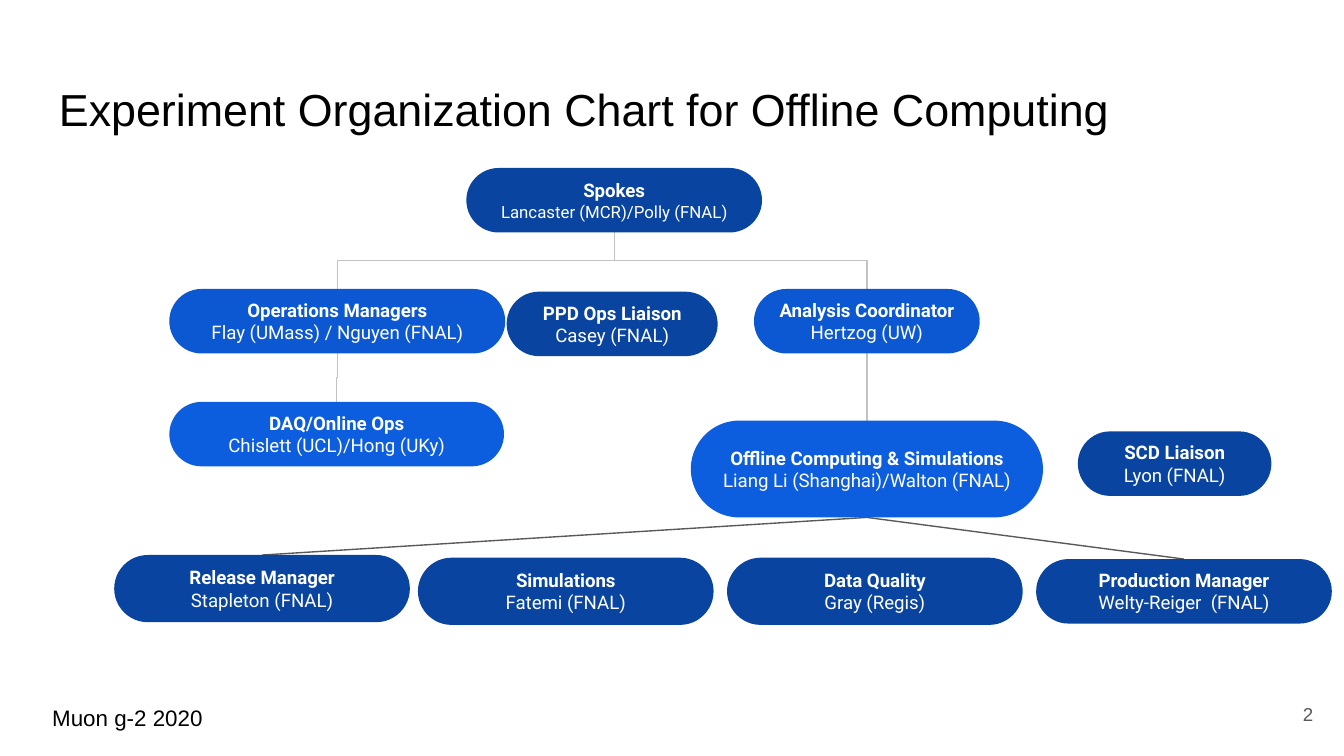
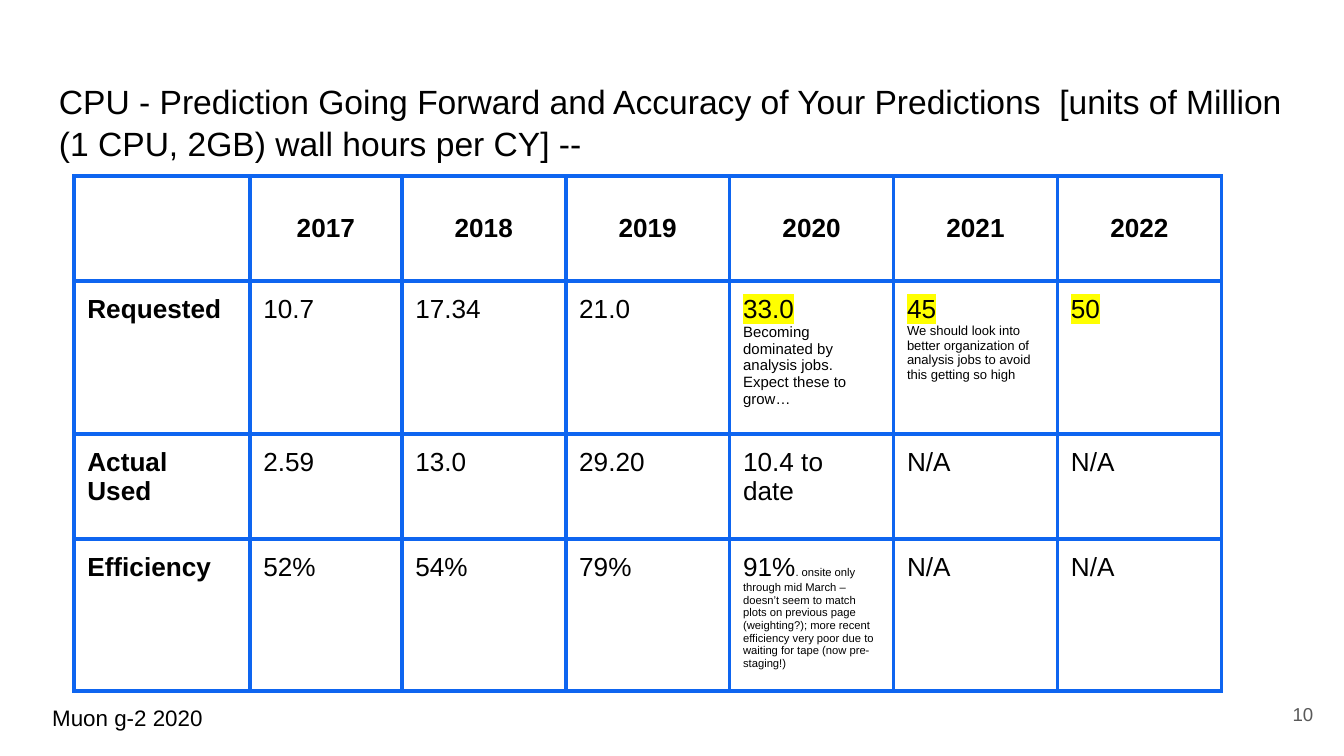
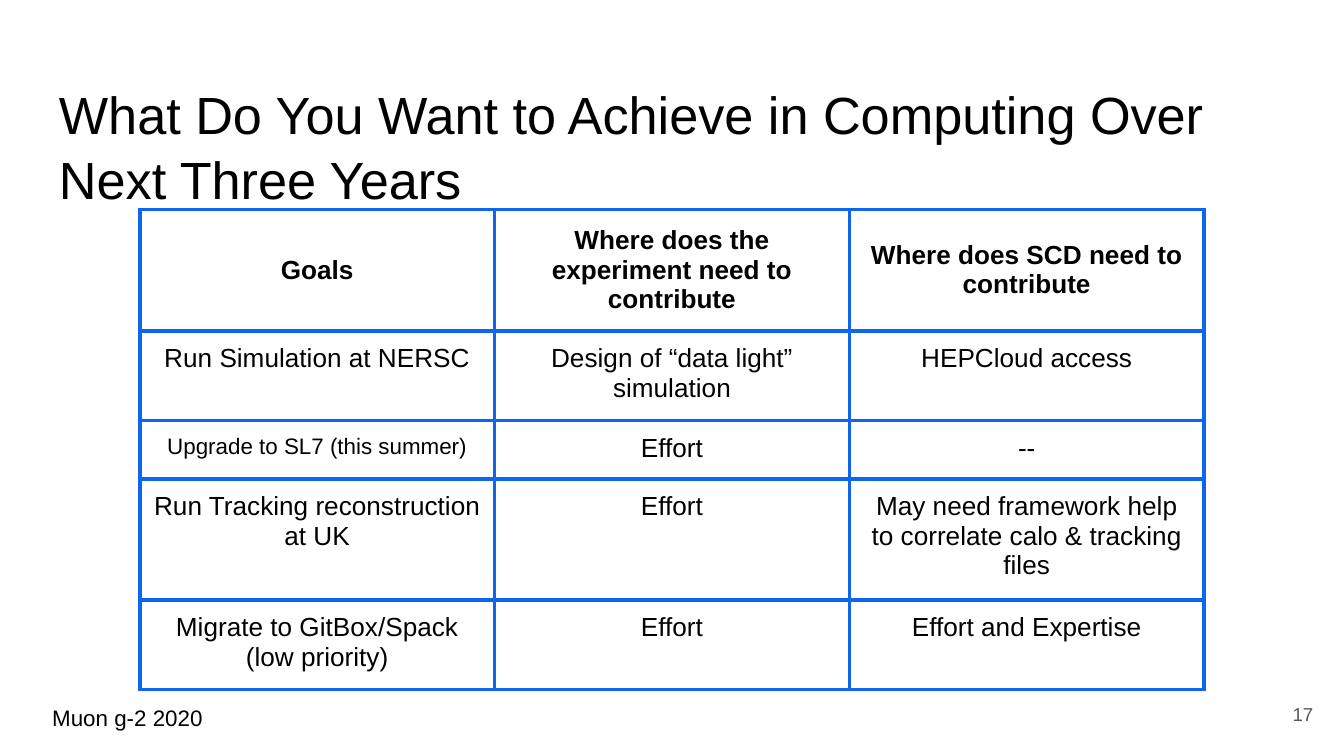
"""Builds three slides on offline computing: an organization chart and two tables."""
import copy
from dataclasses import dataclass
from typing import Optional

import pptx
import pptx.dml.color
import pptx.enum.shapes
import pptx.enum.text
import pptx.oxml
import pptx.oxml.ns
import pptx.util
from lxml import etree

ALIGN = pptx.enum.text.PP_ALIGN
ANCHOR = pptx.enum.text.MSO_ANCHOR
CONNECTOR = pptx.enum.shapes.MSO_CONNECTOR
qn = pptx.oxml.ns.qn

WIDTH, HEIGHT = pptx.util.Inches(10), pptx.util.Inches(5.625)
COLUMNS, ROWS = 100, 56.25
BLACK, WHITE, GRAY, SILVER = "000000", "FFFFFF", "595959", "C2C2C2"
NAVY, ROYAL, AZURE, BORDER = "0944A1", "0C58D3", "0D5DDF", "0E65F0"
YELLOW = "FFFF00"


@dataclass
class Run:
    text: str
    size: float = 14
    bold: bool = False
    color: str = BLACK
    font: str = "Arial"
    highlight: Optional[str] = None


@dataclass
class Post:
    role: str
    people: str
    x: float
    y: float
    w: float
    h: float = 4.8
    fill: str = NAVY
    people_size: float = 10
    same_paragraph: bool = False


@dataclass
class Link:
    parent: str
    child: str
    kind: int = CONNECTOR.ELBOW
    color: str = SILVER


POSTS = [
    Post("Spokes", "Lancaster (MCR)/Polly (FNAL)", 34.7, 12.5, 22, people_size=9),
    Post("Analysis Coordinator", "Hertzog (UW)", 56.1, 21.5, 16.8, fill=ROYAL),
    Post("Operations Managers", "Flay (UMass) / Nguyen (FNAL)", 12.6, 21.5, 25,
         fill=ROYAL, same_paragraph=True),
    Post("DAQ/Online Ops", "Chislett (UCL)/Hong (UKy)", 12.6, 29.9, 24.9,
         fill=AZURE, same_paragraph=True),
    Post("Offline Computing & Simulations", "Liang Li (Shanghai)/Walton (FNAL)",
         51.4, 31.3, 26.2, 7.2, AZURE, same_paragraph=True),
    Post("Release Manager", "Stapleton (FNAL)", 8.5, 41.3, 22, 5),
    Post("Production Manager", "Welty-Reiger  (FNAL)", 77.1, 41.6, 22),
    Post("SCD Liaison", "Lyon (FNAL)", 80.2, 32.1, 14.4),
    Post("Simulations", "Fatemi (FNAL)", 31.1, 41.5, 22, 5),
    Post("Data Quality", "Gray (Regis)", 54.1, 41.5, 22, 5),
    Post("PPD Ops Liaison", "Casey (FNAL)", 37.7, 21.7, 15.7),
]

LINKS = [
    Link("Spokes", "Analysis Coordinator"),
    Link("Spokes", "Operations Managers"),
    Link("Operations Managers", "DAQ/Online Ops"),
    Link("Analysis Coordinator", "Offline Computing & Simulations"),
    Link("Offline Computing & Simulations", "Release Manager", CONNECTOR.STRAIGHT, GRAY),
    Link("Offline Computing & Simulations", "Production Manager", CONNECTOR.STRAIGHT, GRAY),
]

CPU_ROWS = [
    ["", "2017", "2018", "2019", "2020", "2021", "2022"],
    ["Requested", "10.7", "17.34", "21.0",
     [[Run("33.0", highlight=YELLOW)],
      [Run("Becoming dominated by analysis jobs. Expect these to grow…", 8)]],
     [[Run("45", highlight=YELLOW)],
      [Run("We should look into better organization of analysis jobs "
           "to avoid this getting so high", 7)]],
     [[Run("50", highlight=YELLOW)]]],
    ["Actual Used", "2.59", "13.0", "29.20", "10.4 to date", "N/A", "N/A"],
    ["Efficiency", "52%", "54%", "79%",
     [[Run("91%"),
       Run(". onsite only through mid March – doesn’t seem to match plots on previous "
           "page (weighting?); more recent efficiency very poor due to waiting for tape "
           "(now pre-staging!)", 6)]],
     "N/A", "N/A"],
]

GOAL_ROWS = [
    ["Goals", "Where does the experiment need to contribute", "Where does SCD need to contribute"],
    ["Run Simulation at NERSC", "Design of “data light” simulation", "HEPCloud access"],
    [[[Run("Upgrade to SL7 (this summer)", 12)]], "Effort", "--"],
    ["Run Tracking reconstruction at UK", "Effort",
     "May need framework help to correlate calo & tracking files"],
    ["Migrate to GitBox/Spack\n(low priority)", "Effort", "Effort and Expertise"],
]


def across(columns: float) -> int:
    """Return the length of a number of grid columns."""
    return int(WIDTH * columns / COLUMNS)


def down(rows: float) -> int:
    """Return the length of a number of grid rows."""
    return int(HEIGHT * rows / ROWS)


def rgb(value: str) -> pptx.dml.color.RGBColor:
    """Return the colour for a hex string."""
    return pptx.dml.color.RGBColor.from_string(value)


def add_run(p, run: Run) -> None:
    """Add a run, turning its newlines into line breaks."""
    for i, piece in enumerate(run.text.split("\n")):
        if i:
            p.add_line_break()
            p._p[-1].append(copy.deepcopy(r._r.rPr))
        if not piece:
            continue
        r = p.add_run()
        r.text = piece
        r.font.name, r.font.size, r.font.bold = run.font, pptx.util.Pt(run.size), run.bold
        r.font.color.rgb = rgb(run.color)
        if run.highlight:
            mark = etree.Element(qn("a:highlight"))
            etree.SubElement(mark, qn("a:srgbClr"), val=run.highlight)
            r._r.rPr.find(qn("a:solidFill")).addnext(mark)


def write(tf, paragraphs: list, align=ALIGN.LEFT, spacing: float = 1.0) -> None:
    """Fill a text frame with paragraphs of runs."""
    for i, runs in enumerate(paragraphs):
        p = tf.add_paragraph() if i else tf.paragraphs[0]
        p.alignment, p.line_spacing = align, spacing
        for run in runs:
            add_run(p, run)


def set_frame(tf, anchor) -> None:
    """Give a text frame wrapping, equal insets and an anchor."""
    tf.word_wrap, tf.vertical_anchor = True, anchor
    tf.margin_left = tf.margin_right = across(1)
    tf.margin_top = tf.margin_bottom = down(1)


def add_text(s, x: float, y: float, w: float, h: float, run: Run,
             align=ALIGN.LEFT, anchor=ANCHOR.TOP, spacing: float = 1.0) -> None:
    """Add a text box holding one run."""
    tf = s.shapes.add_textbox(across(x), down(y), across(w), down(h)).text_frame
    set_frame(tf, anchor)
    write(tf, [[run]], align, spacing)


def add_slide(prs, title: str, size: float, number: int, title_height: float = 6.3):
    """Add a slide with its title, footer and page number."""
    s = prs.slides.add_slide(prs.slide_layouts[6])
    add_text(s, 2.9, 51.4, 16, 2.9, Run("Muon g-2 2020", 12))
    add_text(s, 3.4, 4.9, 93.2, title_height, Run(title, size), spacing=1.04)
    add_text(s, 92.7, 51, 6, 4.3, Run(str(number), 10, color=GRAY), ALIGN.RIGHT, ANCHOR.MIDDLE)
    return s


def add_link(s, link: Link, posts: dict) -> None:
    """Join the bottom of the parent post to the top of the child post."""
    parent, child = posts[link.parent], posts[link.child]
    x1, y1 = across(parent.x + parent.w / 2), down(parent.y + parent.h)
    x2, y2 = across(child.x + child.w / 2), down(child.y)
    if link.kind == CONNECTOR.ELBOW:
        cx, cy, half_w, half_h = (x1 + x2) // 2, (y1 + y2) // 2, (x2 - x1) // 2, (y2 - y1) // 2
        line = s.shapes.add_connector(link.kind, cx - half_h, cy + half_w, cx + half_h, cy - half_w)
        line._element.spPr.find(qn("a:xfrm")).set("rot", "5400000")
    else:
        line = s.shapes.add_connector(link.kind, x1, y1, x2, y2)
    line.line.color.rgb = rgb(link.color)
    line.line.width = pptx.util.Pt(0.75)
    etree.SubElement(line._element.spPr, qn("a:effectLst"))


def add_post(s, post: Post) -> None:
    """Draw a rounded box with a role and the people who hold it."""
    sp = s.shapes.add_shape(pptx.enum.shapes.MSO_SHAPE.ROUNDED_RECTANGLE,
                            across(post.x), down(post.y), across(post.w), down(post.h))
    sp.adjustments[0] = 0.5
    sp.shadow.inherit = False
    sp.fill.solid()
    sp.fill.fore_color.rgb = rgb(post.fill)
    sp.line.fill.background()
    role = Run(post.role, 10, True, WHITE, "Roboto")
    people = Run(post.people, post.people_size, False, WHITE, "Roboto")
    if post.same_paragraph:
        role.text += "\n"
    set_frame(sp.text_frame, ANCHOR.MIDDLE)
    write(sp.text_frame, [[role, people]] if post.same_paragraph else [[role], [people]],
          ALIGN.CENTER)


def style_cell(cell) -> None:
    """Give a cell its borders, no fill and equal insets."""
    tcPr = cell._tc.get_or_add_tcPr()
    for side in ("L", "R", "T", "B"):
        ln = etree.SubElement(tcPr, qn(f"a:ln{side}"), w=str(pptx.util.Pt(2.25)))
        etree.SubElement(etree.SubElement(ln, qn("a:solidFill")), qn("a:srgbClr"), val=BORDER)
    cell.fill.background()
    cell.margin_left = cell.margin_right = across(1)
    cell.margin_top = cell.margin_bottom = down(1)


def add_table(s, x: float, y: float, widths: list, heights: list, rows: list,
              body_align=ALIGN.LEFT, bold_labels: bool = False) -> None:
    """Add a bordered table with a bold, centred header row."""
    table = s.shapes.add_table(len(rows), len(widths), across(x), down(y),
                               across(sum(widths)), down(sum(heights))).table
    table.first_row = table.horz_banding = False
    for column, width in zip(table.columns, widths):
        column.width = across(width)
    for i, (values, height) in enumerate(zip(rows, heights)):
        table.rows[i].height = down(height)
        for j, value in enumerate(values):
            cell = table.cell(i, j)
            style_cell(cell)
            cell.vertical_anchor = ANCHOR.TOP if i else ANCHOR.MIDDLE
            if isinstance(value, str):
                value = [[Run(value, bold=i == 0 or (bold_labels and j == 0))]]
            write(cell.text_frame, value, body_align if i else ALIGN.CENTER)


def main() -> None:
    """Build the slides and save the file."""
    prs = pptx.Presentation()
    prs.slide_width, prs.slide_height = WIDTH, HEIGHT

    s = add_slide(prs, "Experiment Organization Chart for Offline Computing", 24, 2)
    posts = {post.role: post for post in POSTS}
    for link in LINKS:
        add_link(s, link, posts)
    for post in POSTS:
        add_post(s, post)

    s = add_slide(prs, "CPU - Prediction Going Forward and Accuracy of Your Predictions  "
                  "[units of Million (1 CPU, 2GB) wall hours per CY] --", 18, 10, 8.8)
    add_table(s, 5.5, 13.1, [13.1, 11.3] + [12.2] * 5, [7.8, 11.4, 7.8, 10.7], CPU_ROWS,
              bold_labels=True)

    s = add_slide(prs, "What Do You Want to Achieve in Computing Over Next Three Years", 28, 17)
    add_table(s, 10.4, 15.6, [26.4] * 3, [8.5, 6.4, 4.2, 8.5, 6.4], GOAL_ROWS, ALIGN.CENTER)

    prs.save("out.pptx")


if __name__ == "__main__":
    main()
